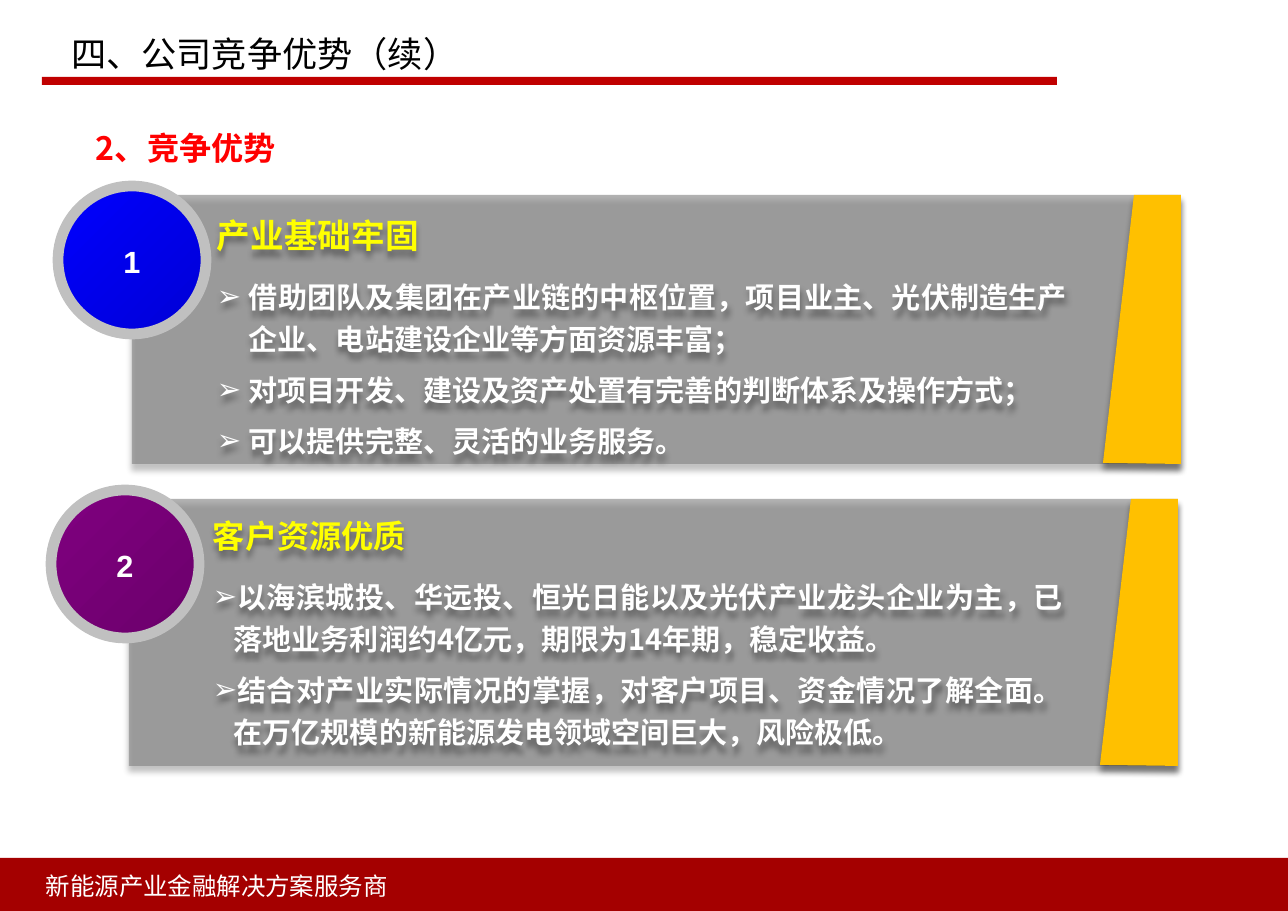
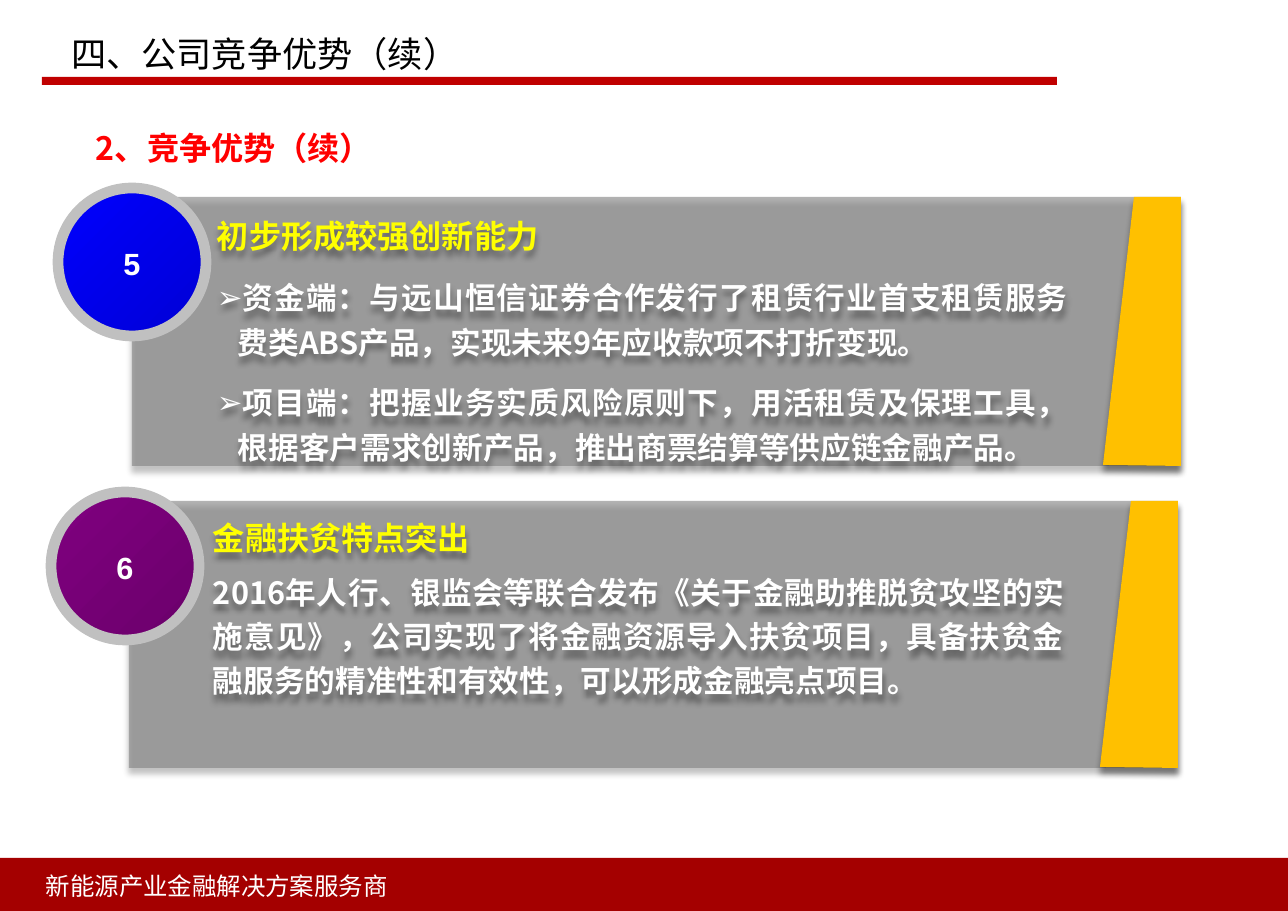
"""Build two slides on the company's competitive advantages."""
from dataclasses import dataclass

from lxml.etree import SubElement
from pptx import Presentation
from pptx.dml.color import RGBColor
from pptx.enum.shapes import MSO_SHAPE
from pptx.enum.text import MSO_ANCHOR, PP_ALIGN
from pptx.oxml.ns import qn
from pptx.util import Emu, Pt


@dataclass(frozen=True)
class Theme:
    font: str = "Noto Sans CJK SC"
    badge_font: str = "Arial"
    rule: str = "C00000"
    footer: str = "A40000"
    heading: str = "FF0000"
    panel: str = "808080"
    panel_title: str = "FFFF00"
    wedge: str = "FFC000"
    ring: str = "C0C0C0"
    white: str = "FFFFFF"
    black: str = "000000"
    title_size: int = 23
    heading_size: int = 21
    badge_size: int = 20
    footer_size: int = 16
    single: float = 1.28
    relaxed: float = 1.44


THEME = Theme()
EMU_PER_PX = 914400 / 110.2
WIDTH, HEIGHT = 1288, 911
TITLE = "四、公司竞争优势（续）"
FOOTER = "新能源产业金融解决方案服务商"
PANEL_WIDTH, PANEL_PITCH = 1049, 304
WEDGE_WIDTH, WEDGE_SLANT = 78, 31
BADGE = 148

PANEL_STYLES = [
    dict(left=132, height=269, text_dx=74, text_dy=11, badge_dx=-74,
         gradient=("0000FF", "0000D5")),
    dict(left=129, height=267, text_dx=73, text_dy=9, badge_dx=-78,
         gradient=("800080", "6B006B")),
]

SLIDES = [
    dict(heading="2、竞争优势", top=195, panels=[
        dict(number="1", title="产业基础牢固", title_size=22, size=19, indent=32, gaps=(8, 3, 3),
             points=["借助团队及集团在产业链的中枢位置，项目业主、光伏制造生产企业、电站建设企业等方面资源丰富；",
                     "对项目开发、建设及资产处置有完善的判断体系及操作方式；",
                     "可以提供完整、灵活的业务服务。"]),
        dict(number="2", title="客户资源优质", title_size=21, size=19, indent=21, gaps=(8, 3),
             points=["以海滨城投、华远投、恒光日能以及光伏产业龙头企业为主，已落地业务利润约4亿元，期限为14年期，稳定收益。",
                     "结合对产业实际情况的掌握，对客户项目、资金情况了解全面。在万亿规模的新能源发电领域空间巨大，风险极低。"]),
    ]),
    dict(heading="2、竞争优势（续）", top=197, panels=[
        dict(number="5", title="初步形成较强创新能力", title_size=21, size=20, indent=21, gaps=(8, 8),
             points=["资金端：与远山恒信证券合作发行了租赁行业首支租赁服务费类ABS产品，实现未来9年应收款项不打折变现。",
                     "项目端：把握业务实质风险原则下，用活租赁及保理工具，根据客户需求创新产品，推出商票结算等供应链金融产品。"]),
        dict(number="6", title="金融扶贫特点突出", title_size=21, size=20, indent=0, gaps=(3,),
             points=["2016年人行、银监会等联合发布《关于金融助推脱贫攻坚的实施意见》，公司实现了将金融资源导入扶贫项目，具备扶贫金融服务的精准性和有效性，可以形成金融亮点项目。"]),
    ]),
]


def px(length):
    return Emu(round(length * EMU_PER_PX))


def color(code):
    return RGBColor.from_string(code)


def add_effect(shape, shadow):
    shape.shadow.inherit = False
    if shadow:
        effects = shape._element.spPr.find(qn("a:effectLst"))
        outer = SubElement(effects, qn("a:outerShdw"), blurRad=str(Pt(4)), dist=str(Pt(4)),
                           dir="5400000", rotWithShape="0")
        tint = SubElement(outer, qn("a:srgbClr"), val=THEME.black)
        SubElement(tint, qn("a:alpha"), val="40000")


def paint(shape, fill, shadow=False, alpha=None):
    shape.fill.solid()
    shape.fill.fore_color.rgb = color(fill)
    shape.line.fill.background()
    if alpha:
        tint = shape._element.spPr.find(qn("a:solidFill")).find(qn("a:srgbClr"))
        SubElement(tint, qn("a:alpha"), val=str(alpha * 1000))
    add_effect(shape, shadow)
    return shape


def add_box(page, left, top, width, height, fill, **look):
    box = page.shapes.add_shape(MSO_SHAPE.RECTANGLE, px(left), px(top), px(width), px(height))
    return paint(box, fill, **look)


def add_text(page, left, top, width, height):
    box = page.shapes.add_textbox(px(left), px(top), px(width), px(height))
    set_frame(box)
    return box


def set_frame(box, insets=(11, 6, 11, 6), anchor=MSO_ANCHOR.TOP):
    frame = box.text_frame
    frame.word_wrap = True
    frame.vertical_anchor = anchor
    frame.margin_left, frame.margin_top, frame.margin_right, frame.margin_bottom = map(px, insets)


def write(box, text, size, ink, bold=False, font=THEME.font, align=PP_ALIGN.LEFT,
          spacing=THEME.single, before=0, after=0, indent=0):
    frame = box.text_frame
    para = frame.add_paragraph() if frame.text else frame.paragraphs[0]
    para.alignment = align
    para.line_spacing = Pt(round(size * spacing, 1))
    para.space_before, para.space_after = Pt(before), Pt(after)
    if indent:
        properties = para._p.get_or_add_pPr()
        properties.set("marL", str(px(indent)))
        properties.set("indent", str(-px(indent)))
        SubElement(properties, qn("a:buFont"), typeface=THEME.badge_font)
        SubElement(properties, qn("a:buChar"), char="➢")
    span = para.add_run()
    span.text = text
    span.font.size, span.font.bold = Pt(size), bold
    span.font.color.rgb = color(ink)
    span.font.name = font
    SubElement(span._r.get_or_add_rPr(), qn("a:ea"), typeface=font)


def add_frame(page, heading):
    add_box(page, 42, 77, 1015, 8, THEME.rule)
    footer = add_box(page, 0, 858, WIDTH, 53, THEME.footer)
    set_frame(footer, insets=(46, 7, 34, 7), anchor=MSO_ANCHOR.MIDDLE)
    write(footer, FOOTER, THEME.footer_size, THEME.white)
    title = add_text(page, 58, 23, 497, 71)
    set_frame(title, insets=(13, 7, 13, 7))
    write(title, TITLE, THEME.title_size, THEME.black)
    write(add_text(page, 85, 120, 336, 50), heading, THEME.heading_size, THEME.heading, bold=True)


def add_wedge(page, right, top, height):
    left = right - WEDGE_WIDTH
    outline = page.shapes.build_freeform(px(left + WEDGE_SLANT), px(top))
    corners = [(right, top), (right, top + height), (left, top + height - 1)]
    outline.add_line_segments([(px(x), px(y)) for x, y in corners], close=True)
    paint(outline.convert_to_shape(), THEME.wedge, shadow=True)


def add_badge(page, left, top, number, gradient):
    badge = page.shapes.add_shape(MSO_SHAPE.FLOWCHART_CONNECTOR, px(left), px(top),
                                  px(BADGE), px(BADGE))
    badge.fill.gradient()
    badge.fill.gradient_angle = 315
    for stop, code in zip(badge.fill.gradient_stops, gradient):
        stop.color.rgb = color(code)
    badge.line.color.rgb = color(THEME.ring)
    badge.line.width = Pt(7)
    add_effect(badge, shadow=False)
    set_frame(badge, insets=(0, 0, 0, 0), anchor=MSO_ANCHOR.MIDDLE)
    write(badge, number, THEME.badge_size, THEME.white, bold=True,
          font=THEME.badge_font, align=PP_ALIGN.CENTER)


def add_panel(page, top, style, panel):
    left, height = style["left"], style["height"]
    add_box(page, left, top, PANEL_WIDTH, height, THEME.panel, shadow=True, alpha=60)
    add_wedge(page, left + PANEL_WIDTH, top, height)
    body = add_text(page, left + style["text_dx"], top + style["text_dy"], 873, 226)
    add_effect(body, shadow=True)
    shared = dict(bold=True, align=PP_ALIGN.JUSTIFY, after=3)
    write(body, panel["title"], panel["title_size"], THEME.panel_title, **shared)
    for point, gap in zip(panel["points"], panel["gaps"]):
        write(body, point, panel["size"], THEME.white, spacing=THEME.relaxed,
              before=gap, indent=panel["indent"], **shared)
    add_badge(page, left + style["badge_dx"], top - 9, panel["number"], style["gradient"])


def main():
    deck = Presentation()
    deck.slide_width, deck.slide_height = px(WIDTH), px(HEIGHT)
    for content in SLIDES:
        page = deck.slides.add_slide(deck.slide_layouts[6])
        add_frame(page, content["heading"])
        for index, (style, panel) in enumerate(zip(PANEL_STYLES, content["panels"])):
            add_panel(page, content["top"] + index * PANEL_PITCH, style, panel)
    deck.save("out.pptx")


if __name__ == "__main__":
    main()
